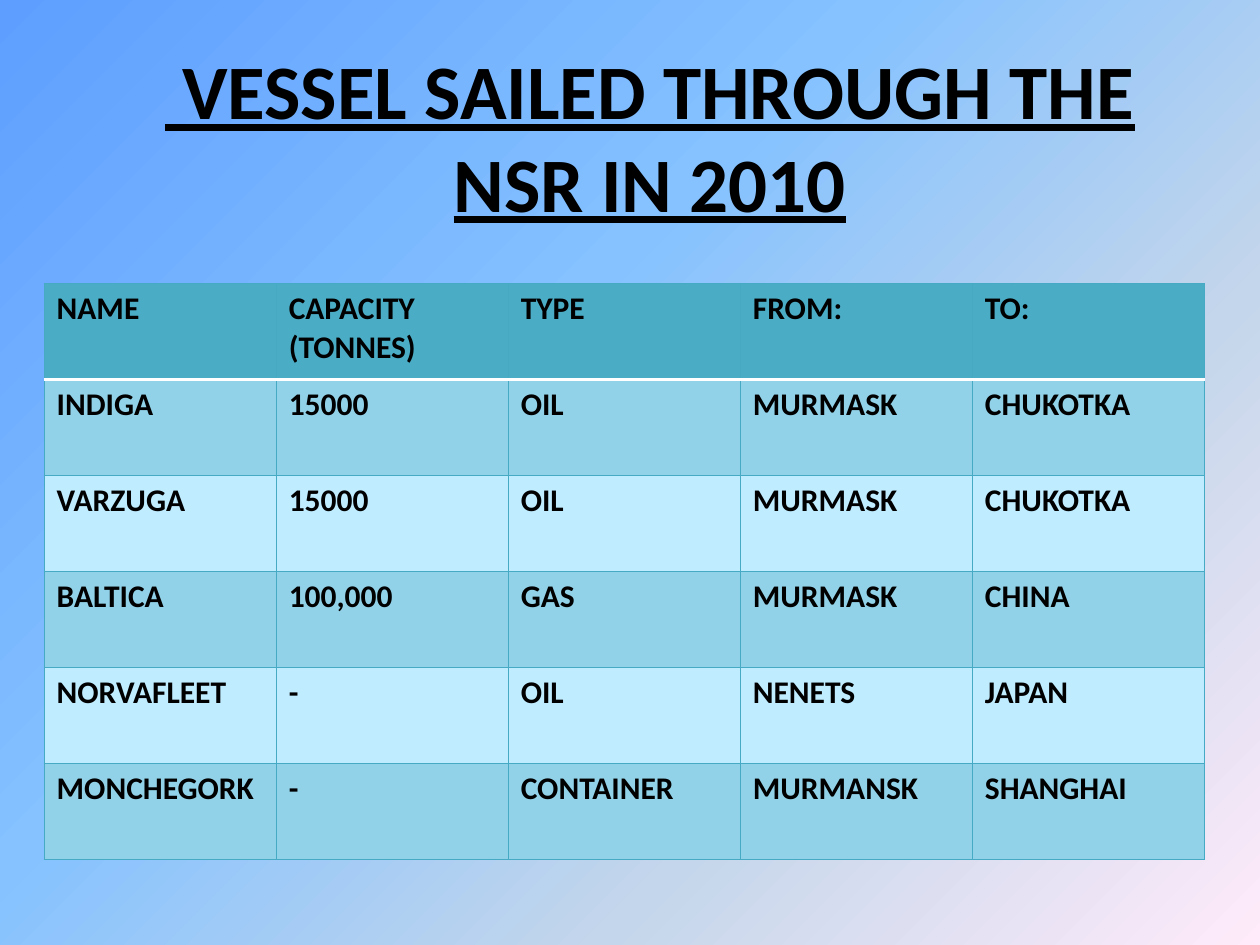
from lxml import etree
from pptx import Presentation
from pptx import util as u
from pptx.dml.color import RGBColor
from pptx.enum import text
from pptx.oxml.ns import qn

FONT = "Calibri"
BLACK, WHITE, TEAL, EDGE = "000000", "FFFFFF", "4BACC6", "46AAC5"
BANDS = ["91D2E8", "BFECFF"]
SKY = [(0, "5E9EFF"), (40, "85C2FF"), (70, "C4D6EB"), (100, "FFEBFA")]
VESSELS = [
    ["NAME", "CAPACITY\n(TONNES)", "TYPE", "FROM:", "TO:"],
    ["INDIGA", "15000", "OIL", "MURMASK", "CHUKOTKA"],
    ["VARZUGA", "15000", "OIL", "MURMASK", "CHUKOTKA"],
    ["BALTICA", "100,000", "GAS", "MURMASK", "CHINA"],
    ["NORVAFLEET", "-", "OIL", "NENETS", "JAPAN"],
    ["MONCHEGORK", "-", "CONTAINER", "MURMANSK", "SHANGHAI"],
]


def color(value):
    """Turn a hex string into a colour."""
    return RGBColor.from_string(value)


def style_text(tf, size, underline=None):
    """Set bold black type on every run of a text frame."""
    for p in tf.paragraphs:
        for r in p.runs:
            r.font.name, r.font.size, r.font.bold = FONT, u.Pt(size), True
            r.font.underline = underline
            r.font.color.rgb = color(BLACK)


def paint_background(s, stops):
    """Fill the slide background with a diagonal gradient."""
    fill = s.background.fill
    fill.gradient()
    fill.gradient_angle = 315
    stop_list = s.element.find(".//" + qn("a:gsLst"))
    for stop in list(stop_list):
        stop_list.remove(stop)
    for position, value in stops:
        stop = etree.SubElement(stop_list, qn("a:gs"), pos=str(position * 1000))
        etree.SubElement(stop, qn("a:srgbClr"), val=value)


def set_borders(cell, borders):
    """Draw the left, right, top and bottom borders of a cell."""
    tc_pr = cell._tc.get_or_add_tcPr()
    for i, (side, (value, width)) in enumerate(zip("LRTB", borders)):
        ln = etree.Element(qn("a:ln" + side), w=str(u.Pt(width)))
        fill = etree.SubElement(ln, qn("a:solidFill"))
        etree.SubElement(fill, qn("a:srgbClr"), val=value)
        tc_pr.insert(i, ln)


def add_title(s, x, y, w, h, title):
    """Place the centred, underlined title."""
    tf = s.shapes.add_textbox(*map(u.Inches, (x, y, w, h))).text_frame
    tf.word_wrap = True
    tf.text = title
    tf.paragraphs[0].alignment = text.PP_ALIGN.CENTER
    style_text(tf, 44, underline=True)


def add_vessel_table(s, x, y, w, h, rows):
    """Place the banded vessel table with a header row."""
    box = map(u.Inches, (x, y, w, h))
    table = s.shapes.add_table(len(rows), len(rows[0]), *box).table
    thin, rule = (EDGE, 0.75), (WHITE, 2)
    for i, row in enumerate(rows):
        top = rule if i == 1 else thin
        bottom = rule if i == 0 else thin
        for j, value in enumerate(row):
            cell = table.cell(i, j)
            cell.text_frame.text = value
            style_text(cell.text_frame, 18)
            cell.fill.solid()
            cell.fill.fore_color.rgb = color(BANDS[(i - 1) % 2] if i else TEAL)
            set_borders(cell, [thin, thin, top, bottom])


def main():
    """Build and save the slide."""
    prs = Presentation()
    prs.slide_width, prs.slide_height = u.Inches(10), u.Inches(7.5)
    s = prs.slides.add_slide(prs.slide_layouts[6])
    paint_background(s, SKY)
    add_title(s, 0.91, 0.29, 8.5, 1.58, " VESSEL SAILED THROUGH THE NSR IN 2010")
    add_vessel_table(s, 0.35, 2.25, 9.21, 4.57, VESSELS)
    prs.save("out.pptx")


if __name__ == "__main__":
    main()
